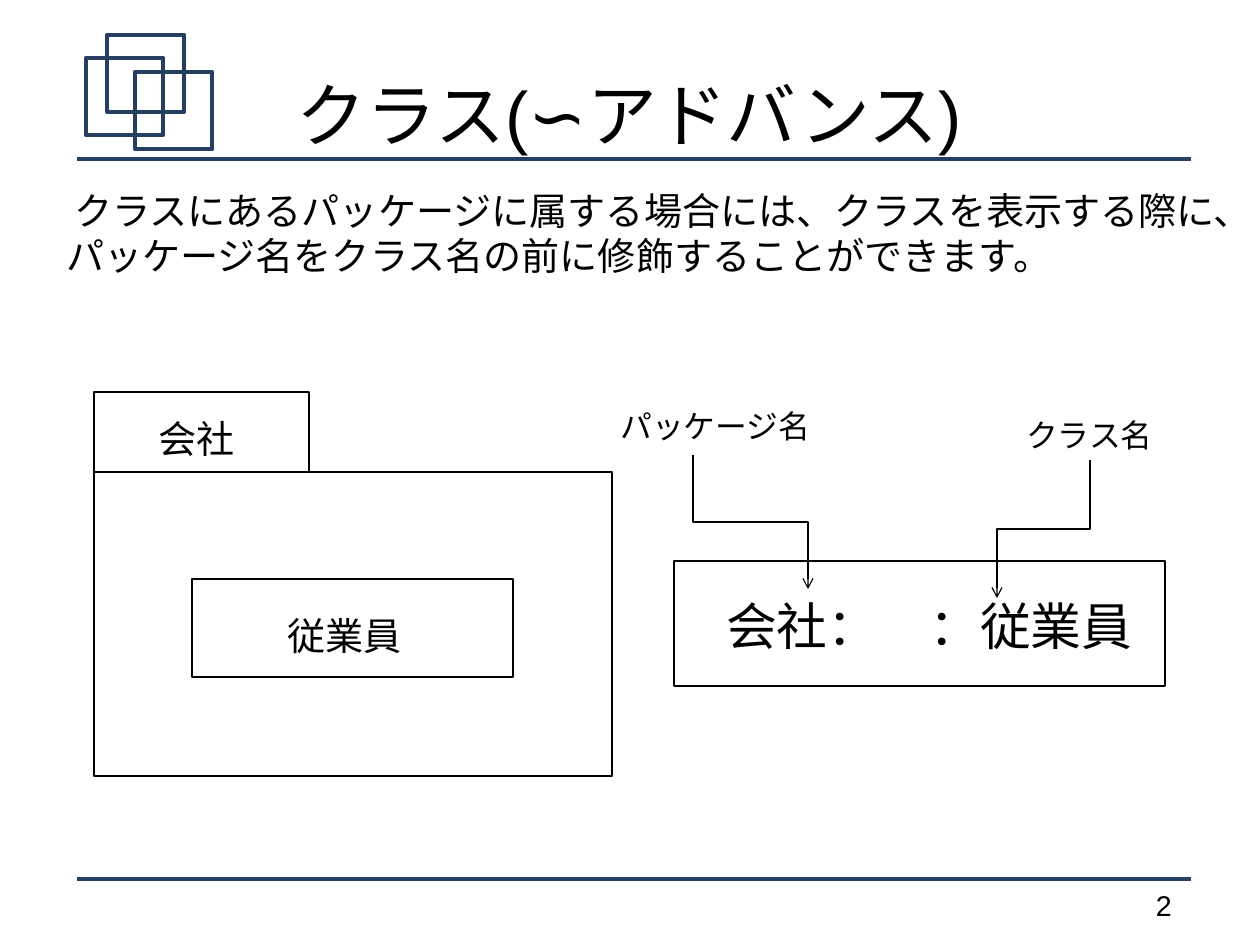
from lxml import etree
from pptx import Presentation
from pptx import util as u
from pptx.dml.color import RGBColor
from pptx.enum import shapes, text
from pptx.oxml.ns import qn

# Content, lengths in px
SIZE = (1260, 945)
NAVY, BLACK, WHITE = "263E60", "000000", "FFFFFF"
RULES = [159, 879]
RULE_X = (77, 1191)
SQUARES = [(86, 58), (107, 35), (135, 72)]
SIDE = 77
RECT, FLOW = shapes.MSO_SHAPE.RECTANGLE, shapes.MSO_SHAPE.FLOWCHART_PROCESS
BOXES = [
    (RECT, (94, 472, 518, 304)),
    (FLOW, (94, 392, 215, 80)),
    (FLOW, (192, 579, 321, 98)),
    (RECT, (674, 561, 491, 125)),
]
LABELS = [
    ("会社", (112, 410, 169, 57), 24),
    ("従業員", (184, 607, 321, 57), 24),
    ("会社：　：従業員", (702, 589, 455, 73), 32),
    ("パッケージ名", (604, 401, 223, 50), 20),
    ("クラス名", (978, 410, 223, 50), 20),
]
ARROWS = [((693, 455), (808, 589)), ((1090, 460), (997, 598))]
TITLE = "クラス(∽アドバンス)"
BODY = ("クラスにあるパッケージに属する場合には、クラスを表示する際に、"
        "パッケージ名をクラス名の前に修飾することができます。")
LEFT, MID = text.PP_ALIGN.LEFT, text.PP_ALIGN.CENTER


def px(n):
    return u.Emu(round(n * 8000))


def rgb(code):
    return RGBColor.from_string(code)


def pen(line, code, width):
    line.color.rgb = rgb(code)
    line.width = u.Pt(width)


def box(kind, area, code, width, fill=None):
    shape = slide.shapes.add_shape(kind, *map(px, area))
    shape.shadow.inherit = False
    if fill:
        shape.fill.solid()
        shape.fill.fore_color.rgb = rgb(fill)
    else:
        shape.fill.background()
    pen(shape.line, code, width)
    return shape


def link(kind, start, end, code, width):
    line = slide.shapes.add_connector(kind, *map(px, (*start, *end)))
    pen(line.line, code, width)
    etree.SubElement(line._element.spPr, qn("a:effectLst"))
    return line


def write(words, area, size, font, align=MID, flat=False):
    frame = slide.shapes.add_textbox(*map(px, area)).text_frame
    frame.word_wrap = True
    if flat:
        frame.margin_left = frame.margin_right = 0
        frame.margin_top = frame.margin_bottom = 0
    para = frame.paragraphs[0]
    para.text = words
    para.alignment = align
    para.font.size = u.Pt(size)
    para.font.name = font
    para.font.color.rgb = rgb(BLACK)
    return frame


def bend(start, end):
    """Elbow that leaves downwards: a sideways elbow turned by a quarter."""
    (x1, y1), (x2, y2) = start, end
    midx, midy = (x1 + x2) / 2, (y1 + y2) / 2
    right = x2 > x1
    long = (y2 - y1) / 2 * (-1 if right else 1)
    high = abs(x2 - x1) / 2
    line = link(shapes.MSO_CONNECTOR.ELBOW, (midx - long, midy - high),
                (midx + long, midy + high), BLACK, 0.75)
    line._element.spPr.find(qn("a:xfrm")).set("rot", "16200000" if right else "5400000")
    etree.SubElement(line.line._get_or_add_ln(), qn("a:tailEnd"), type="arrow")


deck = Presentation()
deck.slide_width, deck.slide_height = map(px, SIZE)
slide = deck.slides.add_slide(deck.slide_layouts[6])

# Rules, page number and corner squares
for y in RULES:
    link(shapes.MSO_CONNECTOR.STRAIGHT, (RULE_X[0], y), (RULE_X[1], y), NAVY, 2.83)
page = write("2", (1156, 889, 46, 38), 18, "Arial", LEFT, True)
page.margin_top = px(2)
page.paragraphs[0].line_spacing = 0.93
for x, y in SQUARES:
    square = box(shapes.MSO_SHAPE.ROUNDED_RECTANGLE, (x, y, SIDE, SIDE), NAVY, 2.83)
    square.adjustments[0] = 0

# Title and body
head = write(TITLE, (63, 40, 1133, 153), 44, "Arial", flat=True)
head.vertical_anchor = text.MSO_ANCHOR.MIDDLE
head.paragraphs[0].line_spacing = 0.98
body = write(BODY, (23, 190, 1210, 131), 24, "Arial", LEFT, True).paragraphs[0]
body.line_spacing = 0.98
props = body._p.get_or_add_pPr()
props.set("marL", str(px(43)))
props.set("indent", str(px(8)))

# Package diagram and qualified name
for kind, area in BOXES:
    box(kind, area, BLACK, 0.75, WHITE)
for words, area, size in LABELS:
    write(words, area, size, "Cambria")
for start, end in ARROWS:
    bend(start, end)

deck.save("out.pptx")
